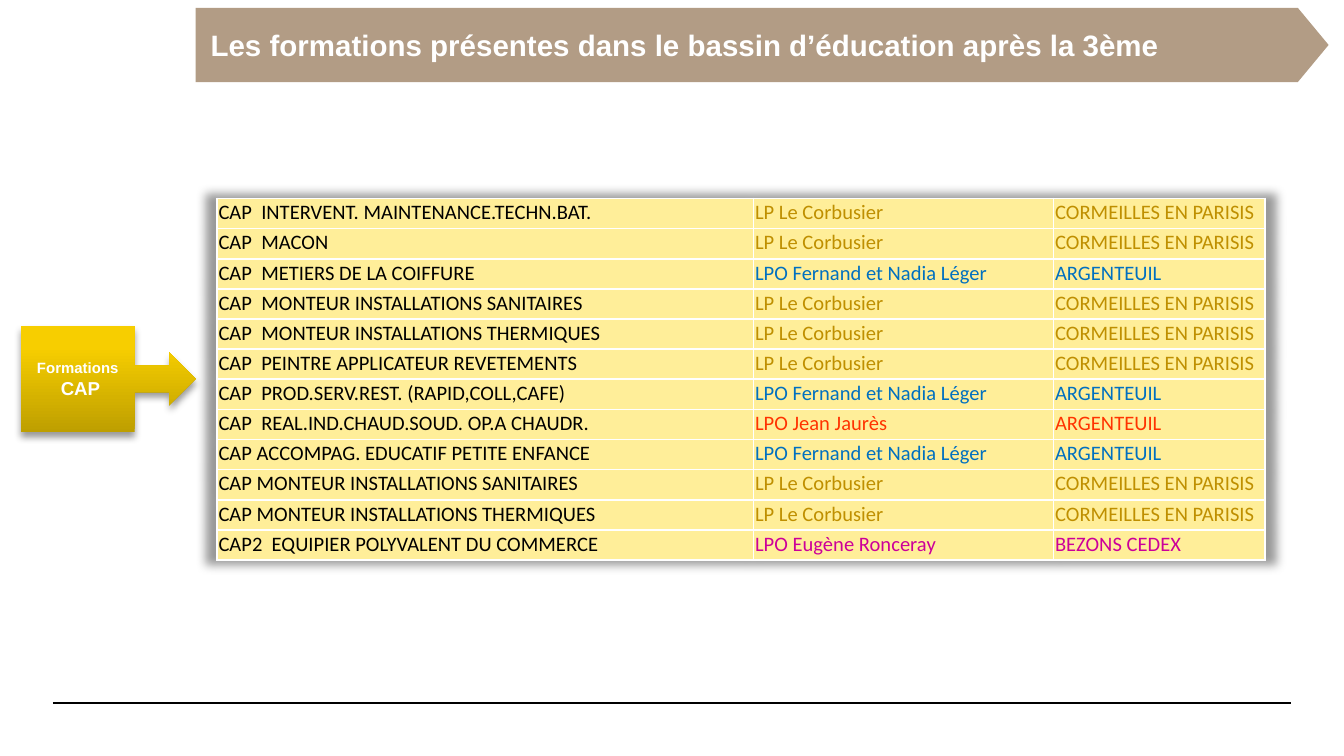
from lxml.etree import SubElement
from pptx import Presentation
from pptx.dml.color import RGBColor
from pptx.enum.shapes import MSO_CONNECTOR, MSO_SHAPE
from pptx.enum.text import MSO_ANCHOR, PP_ALIGN
from pptx.oxml import parse_xml
from pptx.oxml.ns import nsdecls, qn
from pptx.util import Cm, Pt

# Content
TITLE = "Les formations présentes dans le bassin d’éducation après la 3ème"
CALLOUT = "Formations\v CAP"
SCHOOLS = {
    "corbusier": ("LP Le Corbusier", "CORMEILLES EN PARISIS"),
    "leger": ("LPO Fernand et Nadia Léger", "ARGENTEUIL"),
    "jaures": ("LPO Jean Jaurès", "ARGENTEUIL"),
    "ronceray": ("LPO Eugène Ronceray", "BEZONS CEDEX"),
}
COURSES = [
    ("CAP  INTERVENT. MAINTENANCE.TECHN.BAT.", "corbusier"),
    ("CAP  MACON", "corbusier"),
    ("CAP  METIERS DE LA COIFFURE", "leger"),
    ("CAP  MONTEUR INSTALLATIONS SANITAIRES", "corbusier"),
    ("CAP  MONTEUR INSTALLATIONS THERMIQUES", "corbusier"),
    ("CAP  PEINTRE APPLICATEUR REVETEMENTS", "corbusier"),
    ("CAP  PROD.SERV.REST. (RAPID,COLL,CAFE)", "leger"),
    ("CAP  REAL.IND.CHAUD.SOUD. OP.A CHAUDR.", "jaures"),
    ("CAP ACCOMPAG. EDUCATIF PETITE ENFANCE", "leger"),
    ("CAP MONTEUR INSTALLATIONS SANITAIRES", "corbusier"),
    ("CAP MONTEUR INSTALLATIONS THERMIQUES", "corbusier"),
    ("CAP2  EQUIPIER POLYVALENT DU COMMERCE", "ronceray"),
]
COLORS = {
    "white": "FFFFFF", "black": "000000", "banner": "B29C85", "cell": "FFEE99",
    "corbusier": "BF8F00", "leger": "0070C0", "jaures": "FF3300", "ronceray": "CC0099",
}
GRADIENT = [(0, "BE9F00"), (80, "F7CE00"), (100, "F8CF00")]
COL_WIDTHS = [10.14, 5.67, 4]
ROW_HEIGHT = 0.57


def rgb(name):
    return RGBColor.from_string(COLORS[name])


def style(r, font, size, color, bold=False):
    r.font.name, r.font.size, r.font.bold = font, Pt(size), bold
    r.font.color.rgb = rgb(color)


def shadow(blur, dist, alpha, scale=100):
    return parse_xml(
        f'<a:effectLst {nsdecls("a")}><a:outerShdw blurRad="{Pt(blur)}" dist="{Pt(dist)}" '
        f'dir="5400000" sx="{scale * 1000}" sy="{scale * 1000}" algn="ctr" rotWithShape="0">'
        f'<a:srgbClr val="{COLORS["black"]}"><a:alpha val="{alpha * 1000}"/></a:srgbClr>'
        f'</a:outerShdw></a:effectLst>')


def add_borders(cell):
    tcPr = cell._tc.get_or_add_tcPr()
    for i, side in enumerate(("lnL", "lnR", "lnT", "lnB")):
        tcPr.insert(i, parse_xml(
            f'<a:{side} {nsdecls("a")} w="{Pt(1)}"><a:solidFill>'
            f'<a:srgbClr val="{COLORS["white"]}"/></a:solidFill></a:{side}>'))


prs = Presentation()
prs.slide_width, prs.slide_height = Cm(25.4), Cm(14.28)
s = prs.slides.add_slide(prs.slide_layouts[6])

# Footer rule
rule = s.shapes.add_connector(MSO_CONNECTOR.STRAIGHT, Cm(1), Cm(13.28), Cm(24.4), Cm(13.28))
rule.line.color.rgb = rgb("black")
rule.line.width = Pt(0.8)
SubElement(rule._element.spPr, qn("a:effectLst"))

# Title banner
sp = s.shapes.add_shape(MSO_SHAPE.PENTAGON, Cm(3.7), Cm(0.15), Cm(21.41), Cm(1.4))
sp.adjustments[0] = 0.415
sp.shadow.inherit = False
sp.fill.solid()
sp.fill.fore_color.rgb = rgb("banner")
sp.line.fill.background()
tf = sp.text_frame
tf.margin_left = tf.margin_right = Cm(0.28)
tf.vertical_anchor = MSO_ANCHOR.MIDDLE
p = tf.paragraphs[0]
p.text = TITLE
p.alignment = PP_ALIGN.JUSTIFY
style(p.runs[0], "Arial", 15.8, "white", True)

# Table of courses
frame = s.shapes.add_table(len(COURSES), len(COL_WIDTHS), Cm(4.1), Cm(3.75),
                           Cm(sum(COL_WIDTHS)), Cm(ROW_HEIGHT * len(COURSES)))
table = frame.table
table.first_row = table.horz_banding = False
table._tbl.tblPr.insert(0, shadow(5, 0, 40, 102))
for col, width in zip(table.columns, COL_WIDTHS):
    col.width = Cm(width)
for i, (course, school) in enumerate(COURSES):
    table.rows[i].height = Cm(ROW_HEIGHT)
    for j, text in enumerate((course, *SCHOOLS[school])):
        cell = table.cell(i, j)
        cell.margin_left = cell.margin_right = cell.margin_top = Cm(0.03)
        cell.margin_bottom = 0
        cell.fill.solid()
        cell.fill.fore_color.rgb = rgb("cell")
        add_borders(cell)
        p = cell.text_frame.paragraphs[0]
        p.text = text
        style(p.runs[0], "Calibri", 11, school if j else "black")

# Callout pointing at the table
sp = s.shapes.add_shape(MSO_SHAPE.RIGHT_ARROW_CALLOUT, Cm(0.4), Cm(6.15), Cm(3.3), Cm(2.01))
sp.line.fill.background()
stops = "".join(f'<a:gs pos="{pos * 1000}"><a:srgbClr val="{color}"/></a:gs>'
                for pos, color in GRADIENT)
spPr = sp._element.spPr
spPr.find(qn("a:ln")).addprevious(parse_xml(
    f'<a:gradFill {nsdecls("a")} rotWithShape="1"><a:gsLst>{stops}</a:gsLst>'
    f'<a:lin ang="16200000" scaled="0"/></a:gradFill>'))
spPr.append(shadow(4, 3, 40))
tf = sp.text_frame
tf.vertical_anchor = MSO_ANCHOR.MIDDLE
p = tf.paragraphs[0]
p.text = CALLOUT
p.alignment = PP_ALIGN.CENTER
for r, size in zip(p.runs, (8, 10)):
    style(r, "Arial", size, "white", True)
SubElement(p._p.find(qn("a:br")), qn("a:rPr")).set("sz", "800")

prs.save("out.pptx")
